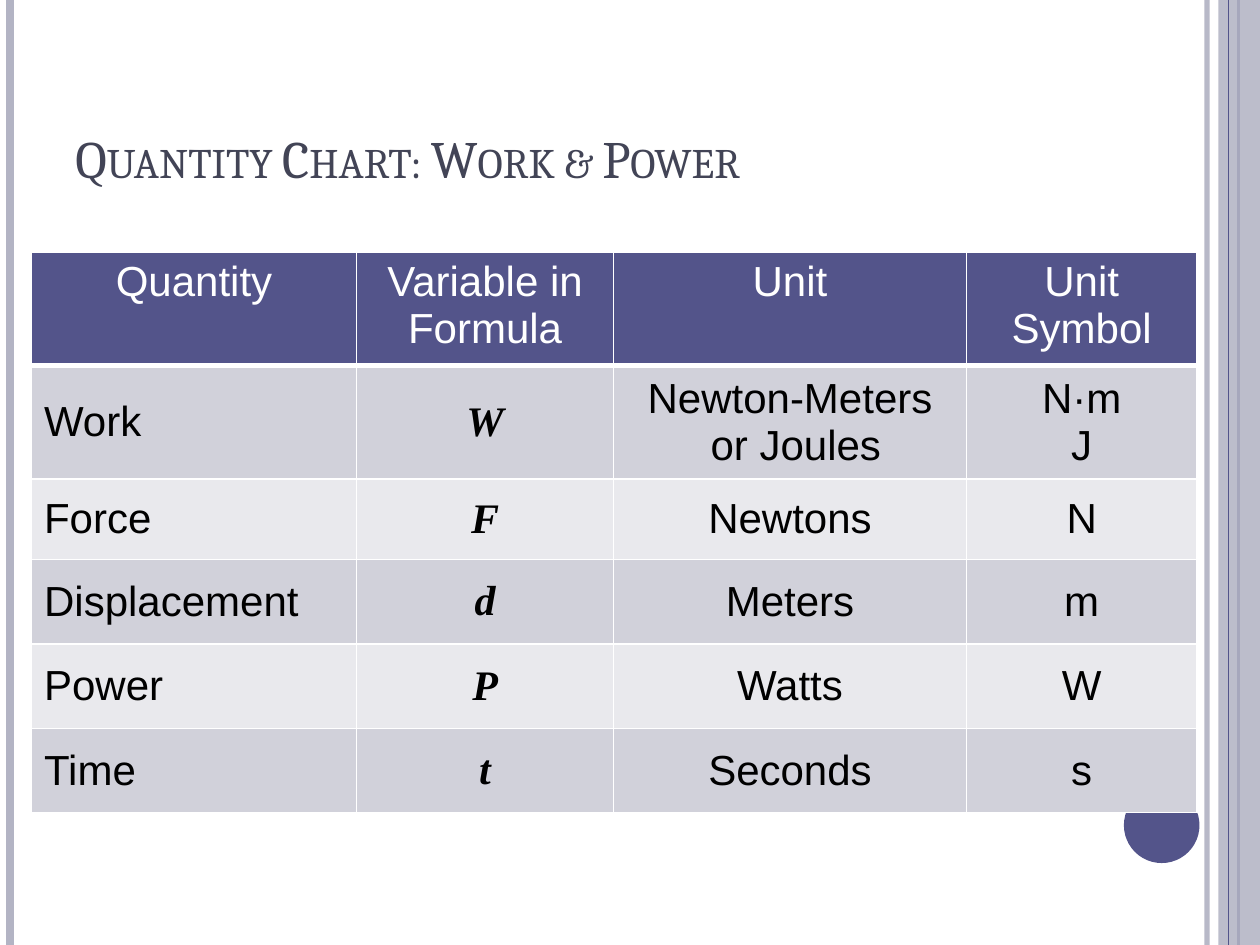
"""Builds the quantity chart slide for work and power."""
import pptx
import pptx.dml.color
import pptx.enum.shapes
import pptx.enum.text
import pptx.oxml
import pptx.oxml.ns
import pptx.util
from pptx.util import Inches

SHAPE = pptx.enum.shapes.MSO_SHAPE
ANCHOR = pptx.enum.text.MSO_ANCHOR
ALIGN = pptx.enum.text.PP_ALIGN
NS = pptx.oxml.ns.nsdecls("a")

ROWS = [
    ("Quantity", "Variable in Formula", "Unit", "Unit Symbol"),
    ("Work", "W", "Newton-Meters\n or Joules", "N·m\nJ"),
    ("Force", "F", "Newtons", "N"),
    ("Displacement", "d", "Meters", "m"),
    ("Power", "P", "Watts", "W"),
    ("Time", "t", "Seconds", "s"),
]
COLUMN_WIDTHS = [2.58, 2.04, 2.8, 1.83]
ROW_HEIGHTS = [0.84, 0.84, 0.64, 0.67, 0.67, 0.67]


def rgb(code):
    return pptx.dml.color.RGBColor.from_string(code)


class QuantitySlide:
    indigo, lilac, ink = "53548A", "B3B4C4", "424456"
    white, black = "FFFFFF", "000000"
    bands = ("E9E9ED", "D1D1DA")
    heading, body, variable = "Cambria", "Arial", "Times New Roman"

    def __init__(self, slide):
        self.slide = slide

    def set_alpha(self, fill_parent, percent):
        for color in fill_parent.iter(pptx.oxml.ns.qn("a:srgbClr")):
            color.append(pptx.oxml.parse_xml(f'<a:alpha {NS} val="{percent * 1000}"/>'))

    def stripe(self, x, color, width, alpha=100):
        stripe = self.slide.shapes.add_connector(
            pptx.enum.shapes.MSO_CONNECTOR.STRAIGHT, Inches(x), 0, Inches(x), Inches(7.5))
        stripe.line.color.rgb = rgb(color)
        stripe.line.width = pptx.util.Pt(width)
        properties = stripe._element.spPr
        if alpha < 100:
            self.set_alpha(properties, alpha)
        properties.append(pptx.oxml.parse_xml(f"<a:effectLst {NS}/>"))

    def block(self, preset, box, color, alpha=100):
        block = self.slide.shapes.add_shape(preset, *map(Inches, box))
        block.shadow.inherit = False
        block.fill.solid()
        block.fill.fore_color.rgb = rgb(color)
        block.line.fill.background()
        if alpha < 100:
            self.set_alpha(block._element.spPr, alpha)

    def style_text(self, frame, size, font, color, align=ALIGN.LEFT, emphasis=False):
        for paragraph in frame.paragraphs:
            paragraph.alignment = align
            for run in paragraph.runs:
                run.font.size = pptx.util.Pt(size)
                run.font.name = font
                run.font.color.rgb = rgb(color)
                run.font.bold = run.font.italic = emphasis

    def title(self, text, box):
        frame = self.slide.shapes.add_textbox(*map(Inches, box)).text_frame
        frame.word_wrap = True
        frame.vertical_anchor = ANCHOR.BOTTOM
        frame.text = text
        self.style_text(frame, 30, self.heading, self.ink)
        frame.paragraphs[0].runs[0].font._element.set("cap", "small")

    def cell_borders(self, cell, widths):
        properties = cell._tc.get_or_add_tcPr()
        for index, (side, width) in enumerate(widths.items()):
            properties.insert(index, pptx.oxml.parse_xml(
                f'<a:{side} {NS} w="{pptx.util.Pt(width)}"><a:solidFill>'
                f'<a:srgbClr val="{self.white}"/></a:solidFill></a:{side}>'))

    def cell(self, cell, text, row, column):
        header = row == 0
        is_variable = column == 1 and not header
        cell.text_frame.text = text
        cell.vertical_anchor = ANCHOR.TOP if header else ANCHOR.MIDDLE
        cell.fill.solid()
        cell.fill.fore_color.rgb = rgb(self.indigo if header else self.bands[row % 2])
        self.style_text(
            cell.text_frame, 24,
            self.variable if is_variable else self.body,
            self.white if header else self.black,
            ALIGN.CENTER if header or column else ALIGN.LEFT,
            is_variable)
        self.cell_borders(cell, {"lnL": 1, "lnR": 1, "lnT": 1, "lnB": 3 if header else 1})

    def table(self, rows, left, top, widths, heights):
        table = self.slide.shapes.add_table(
            len(rows), len(widths), Inches(left), Inches(top),
            Inches(sum(widths)), Inches(sum(heights))).table
        for column, width in zip(table.columns, widths):
            column.width = Inches(width)
        for row, height in zip(table.rows, heights):
            row.height = Inches(height)
        for r, texts in enumerate(rows):
            for c, text in enumerate(texts):
                self.cell(table.cell(r, c), text, r, c)


def main():
    deck = pptx.Presentation()
    deck.slide_width, deck.slide_height = Inches(10), Inches(7.5)
    page = QuantitySlide(deck.slides.add_slide(deck.slide_layouts[6]))
    page.stripe(9.58, page.lilac, 3, 93)
    page.stripe(0.08, page.lilac, 4.5)
    page.stripe(9.83, page.indigo, 1.5)
    page.block(SHAPE.RECTANGLE, (9.67, 0, 0.33, 7.5), page.lilac, 87)
    page.stripe(9.75, page.indigo, 0.75)
    page.block(SHAPE.OVAL, (8.92, 6.25, 0.6, 0.6), page.indigo)
    page.title("Quantity Chart: Work & Power", (0.5, 0.3, 8.17, 1.25))
    page.table(ROWS, 0.25, 2, COLUMN_WIDTHS, ROW_HEIGHTS)
    deck.save("out.pptx")


if __name__ == "__main__":
    main()
